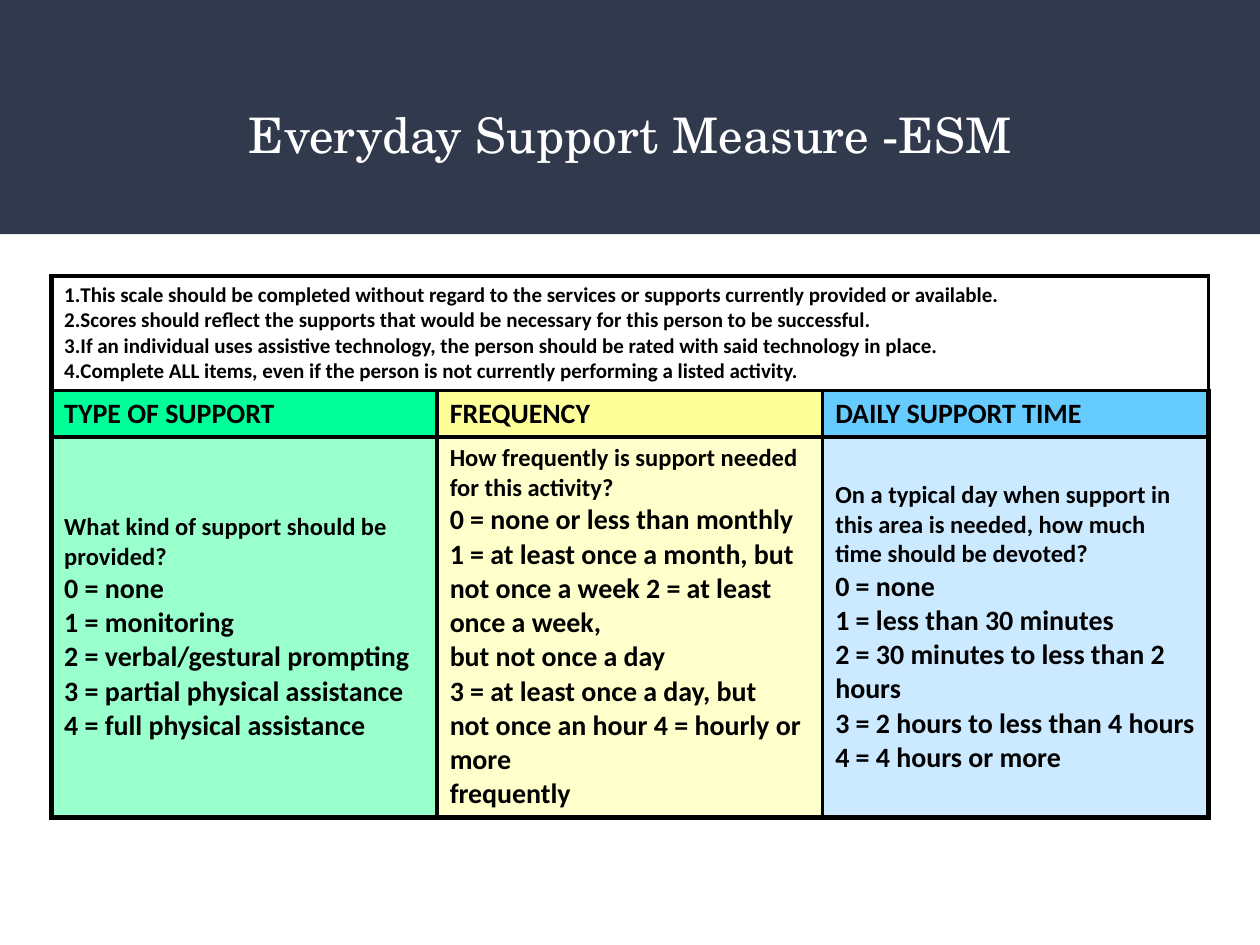
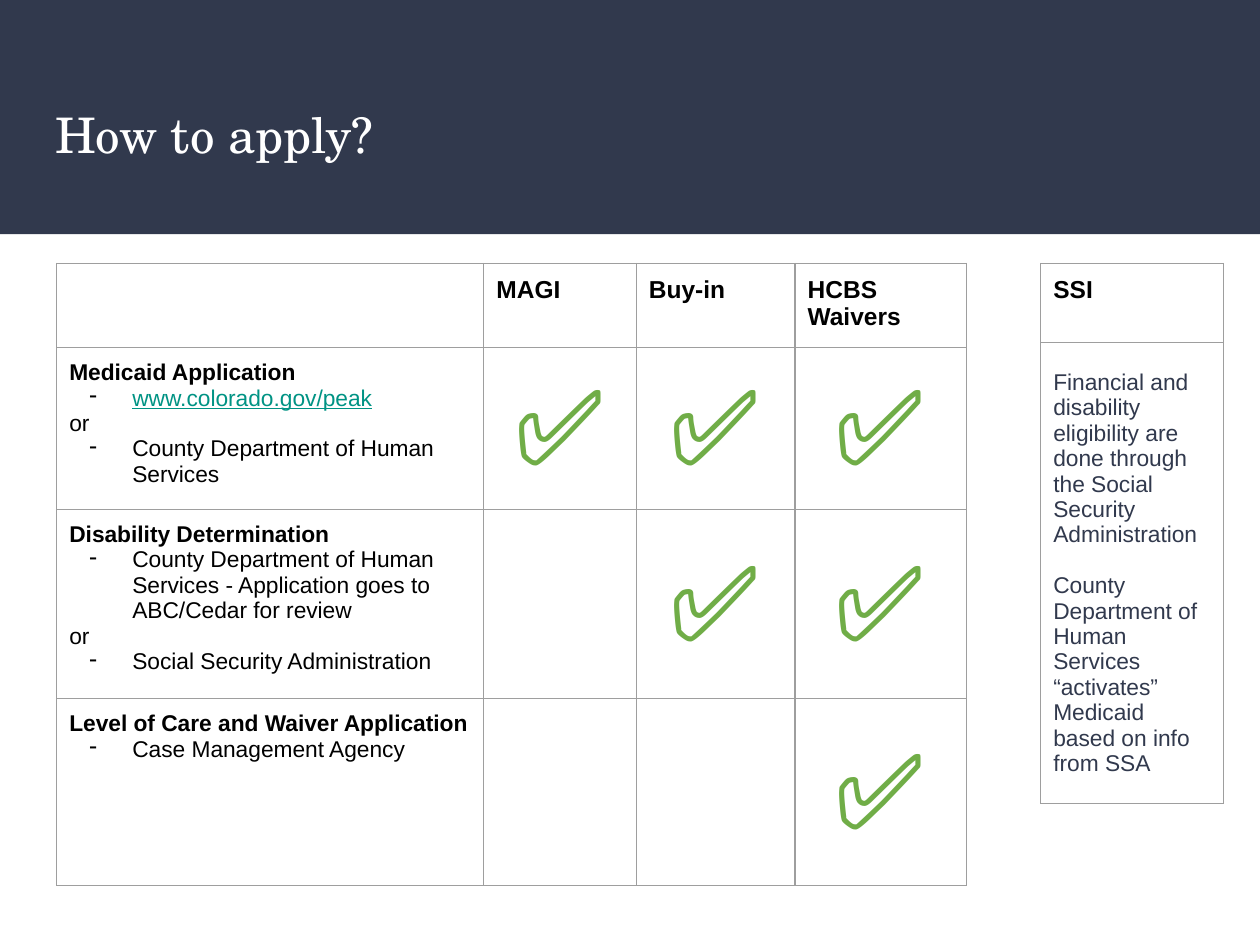
import pptx
import pptx.util
import pptx.dml.color
import pptx.enum.shapes
import pptx.enum.text
import pptx.oxml
import pptx.oxml.ns

Inches, Pt = pptx.util.Inches, pptx.util.Pt
RGB = pptx.dml.color.RGBColor
ALIGN, ANCHOR = pptx.enum.text.PP_ALIGN, pptx.enum.text.MSO_ANCHOR

# Colours and fonts
NAVY = RGB(0x31, 0x39, 0x4D)
WHITE = RGB(0xFF, 0xFF, 0xFF)
BLACK = RGB(0, 0, 0)
GREY = RGB(0x9E, 0x9E, 0x9E)
TEAL = RGB(0x00, 0x93, 0x84)
GREEN = RGB(0x70, 0xAD, 0x47)
MINT, PALE_MINT = RGB(0x00, 0xFF, 0x99), RGB(0x99, 0xFF, 0xCC)
LEMON, PALE_LEMON = RGB(0xFF, 0xFF, 0x99), RGB(0xFF, 0xFF, 0xCC)
SKY, PALE_SKY = RGB(0x66, 0xCC, 0xFF), RGB(0xCC, 0xEA, 0xFF)
SERIF, SANS, BODY = "TeX Gyre Schola", "Arial", "Calibri"

# Content of the scale slide
RULES = [
    "This scale should be completed without regard to the services or supports currently provided or available.",
    "Scores should reflect the supports that would be necessary for this person to be successful.",
    "If an individual uses assistive technology, the person should be rated with said technology in place.",
    "Complete ALL items, even if the person is not currently performing a listed activity.",
]
SCALES = [
    ("TYPE OF SUPPORT", MINT, PALE_MINT,
     "What kind of support should be provided?",
     ["0 = none", "1 = monitoring", "2 = verbal/gestural prompting",
      "3 = partial physical assistance", "4 = full physical assistance"]),
    ("FREQUENCY", LEMON, PALE_LEMON,
     "How frequently is support needed for this activity?",
     ["0 = none or less than monthly",
      "1 = at least once a month, but not once a week 2 = at least once a week,",
      "but not once a day\v3 = at least once a day, but",
      "not once an hour 4 = hourly or more", "frequently"]),
    ("DAILY SUPPORT TIME", SKY, PALE_SKY,
     "On a typical day when support in this area is needed, how much time should be devoted?",
     ["0 = none", "1 = less than 30 minutes", "2 = 30 minutes to less than 2 hours",
      "3 = 2 hours to less than 4 hours", "4 = 4 hours or more"]),
]

# Content of the apply slide: heading, lines, and the ways that need the step
DASH = dict(bullet="-", left=0.5, indent=-0.34)
WAYS = ["MAGI", "Buy-in", "HCBS Waivers"]
STEPS = [
    ("Medicaid Application",
     [("www.colorado.gov/peak", dict(DASH, color=TEAL, line=True)), "or",
      ("County Department of Human Services", DASH)], WAYS),
    ("Disability Determination",
     [("County Department of Human Services - Application goes to ABC/Cedar for review", DASH),
      "or", ("Social Security Administration", DASH)], WAYS[1:]),
    ("Level of Care and Waiver Application",
     [("Case Management Agency", DASH)], WAYS[2:]),
]
SSI = [
    "Financial and disability eligibility are done through the Social Security Administration",
    ("County Department of Human Services “activates” Medicaid based on info from SSA",
     dict(before=14.5)),
]


def xml(tag, inner="", attrs=""):
    space = pptx.oxml.ns.nsdecls("a")
    return pptx.oxml.parse_xml(f"<a:{tag} {space} {attrs}>{inner}</a:{tag}>")


def write(frame, paras, **base):
    """Fill a frame; each paragraph is text or a (text, format) pair."""
    frame.word_wrap = True
    for i, item in enumerate(paras):
        words, own = (item, {}) if isinstance(item, str) else item
        form = {**base, **own}
        para = frame.paragraphs[0] if i == 0 else frame.add_paragraph()
        para.text = words
        para.alignment = form.get("align", ALIGN.LEFT)
        para.space_before = Pt(form.get("before", 0))
        if "bullet" in form:
            props = para._p.get_or_add_pPr()
            props.set("marL", str(Inches(form["left"])))
            props.set("indent", str(Inches(form["indent"])))
            props.append(xml("buClr", f'<a:srgbClr val="{BLACK}"/>'))
            if form["bullet"] == "1.":
                props.append(xml("buAutoNum", attrs='type="arabicPeriod"'))
            else:
                props.append(xml("buChar", attrs=f'char="{form["bullet"]}"'))
        for run in para.runs:
            font = run.font
            font.name, font.size = form["font"], Pt(form["size"])
            font.bold = form.get("bold", False)
            font.underline = form.get("line", False)
            font.color.rgb = form.get("color", BLACK)


def start(deck, title, align):
    """Add a slide with the shared band and title."""
    slide = deck.slides.add_slide(deck.slide_layouts[6])
    band = slide.shapes.add_shape(pptx.enum.shapes.MSO_SHAPE.RECTANGLE,
                                  0, 0, deck.slide_width, Inches(1.86))
    band.shadow.inherit = False
    band.fill.solid()
    band.fill.fore_color.rgb = NAVY
    band.line.fill.background()
    box = slide.shapes.add_textbox(Inches(0.34), Inches(0.73), Inches(9.32), Inches(0.91))
    frame = box.text_frame
    frame.margin_left = frame.margin_right = Inches(0.1)
    frame.margin_top = frame.margin_bottom = Inches(0.1)
    write(frame, [title], font=SERIF, size=28, color=WHITE, align=align)
    return slide


def grid(slide, left, top, cols, rows):
    """Add a plain table with the given column widths and row heights."""
    table = slide.shapes.add_table(
        len(rows), len(cols), Inches(left), Inches(top),
        Inches(sum(cols)), Inches(sum(rows))).table
    table.first_row = table.horz_banding = False
    for col, wide in zip(table.columns, cols):
        col.width = Inches(wide)
    for row, high in zip(table.rows, rows):
        row.height = Inches(high)
    return table


def dress(table, color, inner, outer, pad):
    """Set padding and borders, heavier along the outer edge."""
    last_row, last_col = len(table.rows) - 1, len(table.columns) - 1
    for r in range(last_row + 1):
        for c in range(last_col + 1):
            cell = table.cell(r, c)
            cell.margin_left = cell.margin_right = Inches(0.1)
            cell.margin_top = cell.margin_bottom = Inches(pad)
            cell.fill.background()
            edges = {"lnL": c == 0, "lnR": c == last_col, "lnT": r == 0, "lnB": r == last_row}
            props = cell._tc.get_or_add_tcPr()
            for i, (tag, rim) in enumerate(edges.items()):
                width = Pt(outer if rim else inner)
                props.insert(i, xml(
                    tag, f'<a:solidFill><a:srgbClr val="{color}"/></a:solidFill>',
                    f'w="{width}"'))


def put(cell, paras, anchor=ANCHOR.TOP, fill=None, **form):
    cell.vertical_anchor = anchor
    if fill is not None:
        cell.fill.solid()
        cell.fill.fore_color.rgb = fill
    write(cell.text_frame, paras, **form)


def scale(deck):
    slide = start(deck, "Everyday Support Measure -ESM", ALIGN.CENTER)
    table = grid(slide, 0.41, 2.19, [3.06] * len(SCALES), [0.91, 0.37, 3.02])
    dress(table, BLACK, 2.2, 3, 0.05)
    table.cell(0, 0).merge(table.cell(0, len(SCALES) - 1))
    form = dict(anchor=ANCHOR.MIDDLE, font=BODY, bold=True)
    put(table.cell(0, 0), RULES, fill=WHITE, size=12,
        bullet="1.", left=0, indent=-0.08, **form)
    for c, (head, deep, pale, ask, marks) in enumerate(SCALES):
        put(table.cell(1, c), [head], fill=deep, size=16, **form)
        put(table.cell(2, c), [(ask, dict(size=14))] + marks, fill=pale, size=16, **form)


def apply(deck):
    slide = start(deck, "How to apply?", ALIGN.LEFT)
    top, head_high = 2.09, 0.63
    head = dict(font=SANS, size=14, bold=True)

    # Steps against ways
    table = grid(slide, 0.45, top, [3.39, 1.21, 1.26, 1.36], [head_high, 1.21, 1.41, 1.48])
    dress(table, GREY, 0.75, 0.75, 0.1)
    for c, way in enumerate(WAYS, 1):
        put(table.cell(0, c), [way], **head)
    for r, (step, lines, needs) in enumerate(STEPS, 1):
        put(table.cell(r, 0), [(step, dict(bold=True))] + lines, font=SANS, size=13)
        for c, way in enumerate(WAYS, 1):
            if way in needs:
                put(table.cell(r, c), ["✅"], anchor=ANCHOR.MIDDLE, font=SANS,
                    size=60, color=GREEN, align=ALIGN.CENTER)

    # Side table
    side = grid(slide, 8.26, top, [1.45], [head_high, 3.43])
    dress(side, GREY, 0.75, 0.75, 0.1)
    put(side.cell(0, 0), ["SSI"], **head)
    put(side.cell(1, 0), SSI, anchor=ANCHOR.MIDDLE, font=SANS, size=13, color=NAVY)


def main():
    deck = pptx.Presentation()
    deck.slide_width, deck.slide_height = Inches(10), Inches(7.5)
    scale(deck)
    apply(deck)
    deck.save("out.pptx")


if __name__ == "__main__":
    main()
